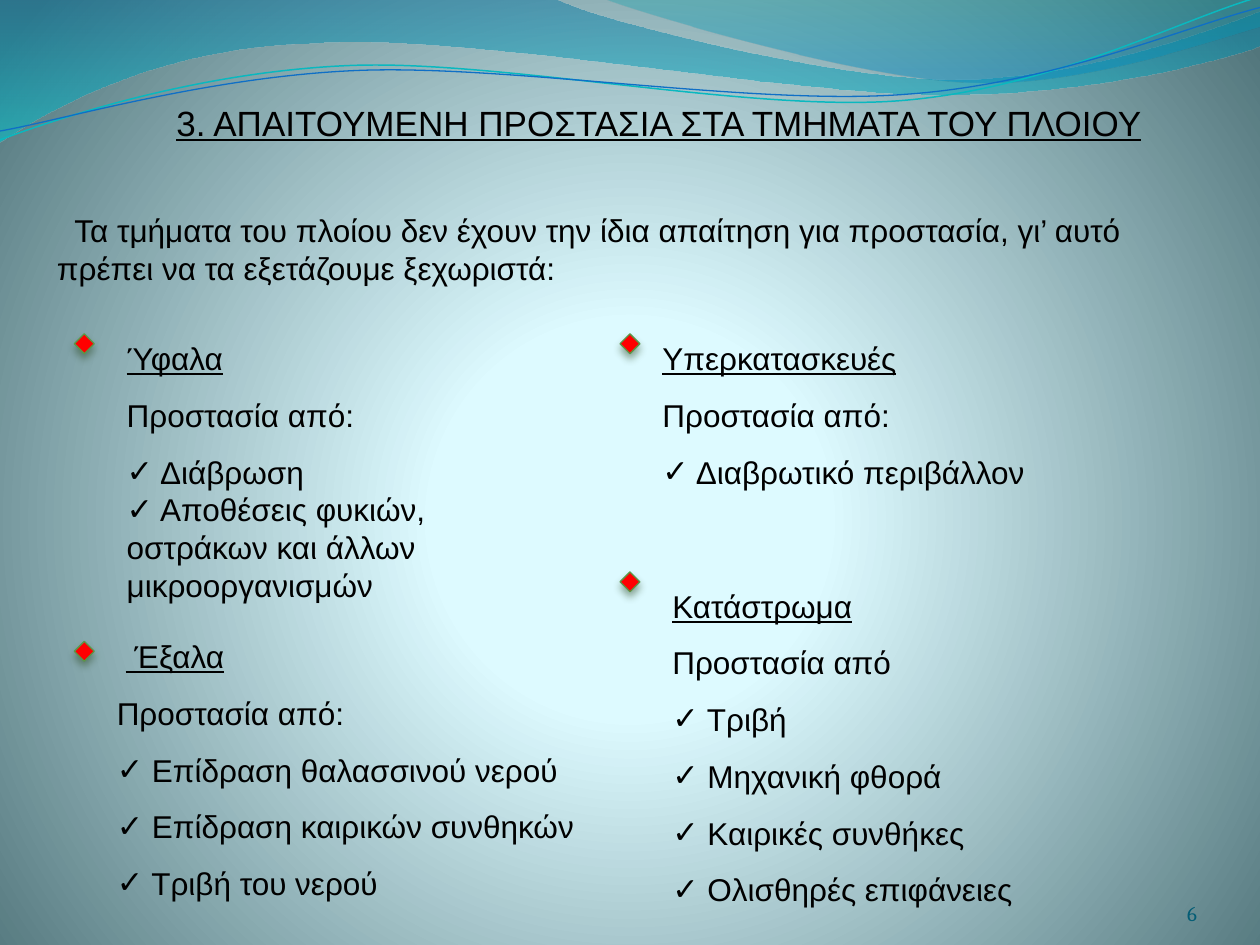
from math import cos, radians, sin

from lxml.etree import SubElement
from pptx import Presentation
from pptx.dml.color import RGBColor
from pptx.enum.shapes import MSO_SHAPE
from pptx.enum.text import MSO_ANCHOR, MSO_AUTO_SIZE, PP_ALIGN
from pptx.oxml import parse_xml
from pptx.oxml.ns import nsdecls, qn
from pptx.util import Cm, Pt

BLACK = RGBColor(0x00, 0x00, 0x00)
RED = RGBColor(0xFF, 0x00, 0x00)
GREEN = RGBColor(0x5B, 0x97, 0x47)
SHADOW = RGBColor(0x2B, 0x48, 0x21)
NUMBER = RGBColor(0x04, 0x5D, 0x75)
PALE = RGBColor(0xDE, 0xFB, 0xFF)
PALE_2 = RGBColor(0xDD, 0xFA, 0xFF)
SLATE = RGBColor(0x52, 0x76, 0x7C)
BLUE = RGBColor(0x00, 0x74, 0xA1)
AQUA = RGBColor(0x00, 0xC6, 0xCF)
TEAL = RGBColor(0x00, 0xA1, 0xA9)
SKY = RGBColor(0x00, 0x8B, 0xBF)
LINE_AQUA = RGBColor(0x0A, 0xB8, 0xBF)
LINE_BLUE = RGBColor(0x0F, 0x6F, 0xC6)
DOWN = '<a:lin ang="5400000" scaled="0"/>'
RADIAL = ('<a:path path="circle"><a:fillToRect l="10000" t="110000" '
          'r="10000" b="100000"/></a:path>')


def set_gradient(props, stops, direction):
    """Swap a solid fill for a gradient of (position, colour, opacity) stops."""
    gs = "".join(
        f'<a:gs pos="{pos * 1000}"><a:srgbClr val="{color}">'
        f'<a:alpha val="{alpha * 1000}"/></a:srgbClr></a:gs>'
        for pos, color, alpha in stops)
    grad = parse_xml(f'<a:gradFill {nsdecls("a")} rotWithShape="1">'
                     f'<a:gsLst>{gs}</a:gsLst>{direction}</a:gradFill>')
    props.replace(props.find(qn("a:solidFill")), grad)


def add_curve(start, segments, close, tilt=0, center=(0, 0)):
    """Draw lines (x, y) and Bezier curves (three points), all in inches."""
    flat = [v for seg in [start] + segments for v in seg]
    cx, cy = center
    c, n = cos(radians(tilt)), sin(radians(tilt))
    pts = [(Cm(2.54 * (cx + (x - cx) * c + (y - cy) * n)),
            Cm(2.54 * (cy - (x - cx) * n + (y - cy) * c)))
           for x, y in zip(flat[::2], flat[1::2])]
    fb = s.shapes.build_freeform(*pts[0])
    fb.add_line_segments(pts[1:], close=close)
    sp = fb.convert_to_shape()
    sp.shadow.inherit = False
    sp.rotation = tilt
    # Each run of three points of a curve becomes one Bezier segment
    lines = iter(list(sp._element.iter(qn("a:lnTo"))))
    for seg in segments:
        group = [next(lines) for _ in range(len(seg) // 2)]
        if len(group) == 3:
            bezier = parse_xml(f'<a:cubicBezTo {nsdecls("a")}/>')
            group[0].addprevious(bezier)
            for line in group:
                bezier.append(line[0])
                line.getparent().remove(line)
    return sp


prs = Presentation()
prs.slide_width, prs.slide_height = Cm(25.4), Cm(19.05)
s = prs.slides.add_slide(prs.slide_layouts[4])

# Background
s.background.fill.solid()
set_gradient(s._element.cSld.bg.bgPr,
             [(0, PALE, 100), (25, PALE_2, 100), (100, SLATE, 100)], RADIAL)

# Waves along the top
waves = [
    ((0, 0), [(4.4, -0.01), (4.76, 0.17, 6.64, 0.63, 7.58, 0.63),
              (8.53, 0.63, 9.58, 0.26, 10, 0.09), (10.01, 0.36),
              (9.83, 0.44, 8.7, 0.76, 7.46, 0.75),
              (6.22, 0.75, 3.82, 0.28, 2.57, 0.34),
              (1.29, 0.36, 0.46, 0.83, -0.01, 1.13)],
     [(0, BLUE, 45), (100, AQUA, 55)]),
    ((4.79, -0.01), [(5.09, 0.11, 6.82, 0.62, 7.69, 0.65),
                     (8.56, 0.69, 9.61, 0.32, 10, 0.21), (10, 0)],
     [(0, TEAL, 30), (80, SKY, 45)]),
]
for start, segments, stops in waves:
    sp = add_curve(start, segments, True)
    sp.line.fill.background()
    sp.fill.solid()
    set_gradient(sp._element.spPr, stops, DOWN)

# Thin tilted lines over the waves
thin_lines = [
    ((0, 1.11), [(0.48, 0.93, 1.58, 0.57, 2.77, 0.52),
                 (3.95, 0.47, 5.93, 0.89, 7.13, 0.8),
                 (8.33, 0.71, 9.38, 0.15, 9.98, -0.02)], (4.99, 0.57), LINE_AQUA, 0.85),
    ((0, 1.04), [(0.47, 0.96, 1.64, 0.61, 2.83, 0.56),
                 (4.03, 0.51, 5.97, 0.84, 7.17, 0.75),
                 (8.36, 0.67, 9.41, 0.21, 10, 0.06)], (5, 0.59), LINE_BLUE, 0.75),
]
for start, segments, center, color, width in thin_lines:
    sp = add_curve(start, segments, False, -2.7, center)
    sp.fill.background()
    sp.line.color.rgb = color
    sp.line.width = Pt(width)

# Title
title = s.shapes.title
title.left, title.top, title.width, title.height = Cm(3.3), Cm(1.92), Cm(20.2), Cm(1.11)
tf = title.text_frame
tf.auto_size = MSO_AUTO_SIZE.NONE
tf.vertical_anchor = MSO_ANCHOR.TOP
p = tf.paragraphs[0]
p.text = "3. ΑΠΑΙΤΟΥΜΕΝΗ ΠΡΟΣΤΑΣΙΑ ΣΤΑ ΤΜΗΜΑΤΑ ΤΟΥ ΠΛΟΙΟΥ"
p.alignment = PP_ALIGN.LEFT
p.font.name, p.font.size, p.font.underline = "Arial", Pt(20), True
p.font.color.rgb = BLACK

# Introduction
tf = s.shapes.add_textbox(Cm(0.9), Cm(4.13), Cm(24), Cm(1.8)).text_frame
tf.word_wrap = True
p = tf.paragraphs[0]
p.text = ("Τα τμήματα του πλοίου δεν έχουν την ίδια απαίτηση για προστασία, "
          "γι’ αυτό πρέπει να τα εξετάζουμε ξεχωριστά:")
p.font.name, p.font.size = "Arial", Pt(18)
p.font.color.rgb = BLACK
p._p.get_or_add_pPr().set("indent", str(Cm(0.35)))

# Parts of the ship: box, heading, lead-in, bullets, single-spaced rows, heading indent
parts = [
    (2.3, 6.33, 8.2, 6.02, "Ύφαλα", "Προστασία από:",
     ["Διάβρωση", "Αποθέσεις φυκιών, οστράκων και άλλων μικροοργανισμών"], {3}, 0),
    (2.1, 12.72, 10.8, 5.64, " Έξαλα", "Προστασία από:",
     ["Επίδραση θαλασσινού νερού", "Επίδραση καιρικών συνθηκών",
      "Τριβή του νερού"], {0}, 0.18),
    (13.1, 6.33, 8.79, 3.58, "Υπερκατασκευές", "Προστασία από:",
     ["Διαβρωτικό περιβάλλον"], set(), 0),
    (13.3, 11.32, 9.8, 7.19, "Κατάστρωμα", "Προστασία από",
     ["Τριβή", "Μηχανική φθορά", "Καιρικές συνθήκες",
      "Ολισθηρές επιφάνειες"], set(), 0),
]
bodies = [ph for ph in s.placeholders if ph.placeholder_format.idx in (1, 2, 3, 4)]
for body, (x, y, w, h, heading, lead, items, single, indent) in zip(bodies, parts):
    body.left, body.top, body.width, body.height = Cm(x), Cm(y), Cm(w), Cm(h)
    tf = body.text_frame
    tf.auto_size = MSO_AUTO_SIZE.NONE
    tf.vertical_anchor = MSO_ANCHOR.TOP
    rows = [heading, lead] + [" " + item for item in items]
    for i, text in enumerate(rows):
        p = tf.paragraphs[0] if i == 0 else tf.add_paragraph()
        p.text = text
        p.line_spacing = 1.0 if i in single else 1.5
        p.space_before = Pt(0)
        p.font.name, p.font.size, p.font.bold = "Arial", Pt(18), False
        p.font.underline = i == 0
        p.font.color.rgb = BLACK
        pPr = p._p.get_or_add_pPr()
        pPr.set("marL", "0")
        pPr.set("indent", str(Cm(indent) if i == 0 else 0))
        bullet = parse_xml(f'<a:buChar {nsdecls("a")} char="✓"/>' if i > 1
                           else f'<a:buNone {nsdecls("a")}/>')
        pPr.find(qn("a:defRPr")).addprevious(bullet)

# Red diamond markers
for x, y in [(1.5, 6.73), (1.5, 12.93), (12.5, 6.73), (12.5, 11.53)]:
    sp = s.shapes.add_shape(MSO_SHAPE.FLOWCHART_DECISION, Cm(x), Cm(y), Cm(0.4), Cm(0.4))
    sp.fill.solid()
    sp.fill.fore_color.rgb = RED
    sp.line.color.rgb = GREEN
    sp.line.width = Pt(0.75)
    sp.shadow.inherit = False
    shadow = SubElement(sp._element.spPr.find(qn("a:effectLst")), qn("a:outerShdw"),
                        blurRad=str(Pt(4.5)), dist=str(Pt(3)), dir="5400000")
    color = SubElement(shadow, qn("a:srgbClr"), val=str(SHADOW))
    SubElement(color, qn("a:alpha"), val="48000")

# Slide number
tf = s.shapes.add_textbox(Cm(22.02), Cm(17.65), Cm(2.11), Cm(1.02)).text_frame
tf.word_wrap = True
tf.margin_left = tf.margin_right = tf.margin_top = tf.margin_bottom = 0
tf.vertical_anchor = MSO_ANCHOR.BOTTOM
p = tf.paragraphs[0]
p.text = "6"
p.alignment = PP_ALIGN.RIGHT
p.font.name, p.font.size = "Cambria", Pt(12)
p.font.color.rgb = NUMBER

prs.save("out.pptx")
